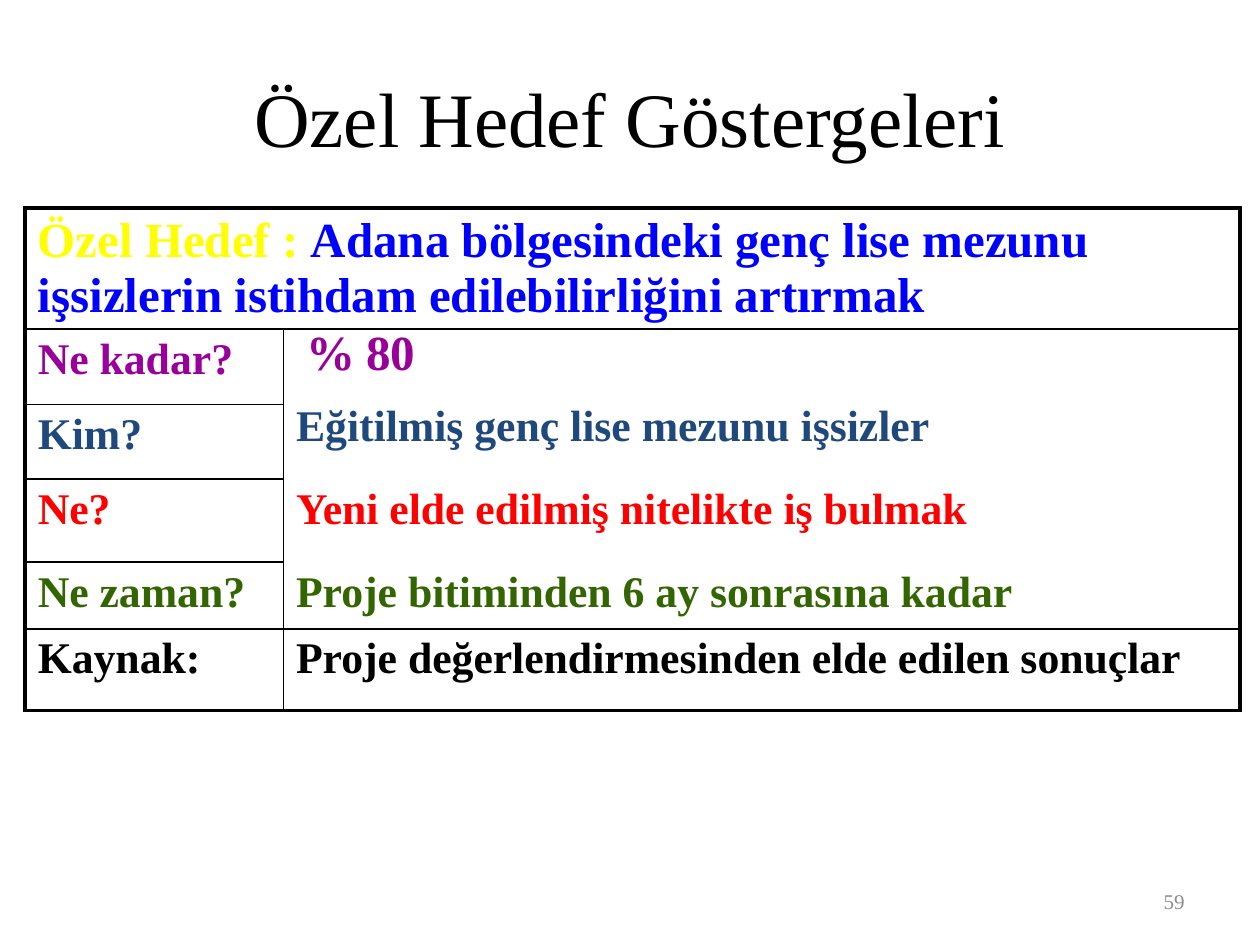
import pptx
import pptx.util
import pptx.dml.color
import pptx.enum.text
import pptx.oxml.ns
import lxml.etree

COLORS = {
    "black": "000000", "white": "FFFFFF", "yellow": "FFFF00", "blue": "0000FF",
    "purple": "990099", "navy": "1F497D", "red": "FF0000", "green": "336600",
    "gray": "8C8C8C",
}
ALIGN = pptx.enum.text.PP_ALIGN
MIDDLE = pptx.enum.text.MSO_ANCHOR.MIDDLE
TITLE_ONLY = 5
OUTER, INNER, NONE = 2.25, 1, 0


class SlideBuilder:
    font_name = "Times New Roman"

    def __init__(self, deck):
        self.width, self.height = deck.slide_width, deck.slide_height
        self.slide = deck.slides.add_slide(deck.slide_layouts[TITLE_ONLY])

    def box(self, left, top, width, height):
        """Turn shares of the slide's size into lengths."""
        return (int(left * self.width), int(top * self.height),
                int(width * self.width), int(height * self.height))

    def style(self, font, size, color, bold=False):
        font.name, font.size, font.bold = self.font_name, pptx.util.Pt(size), bold
        font.color.rgb = pptx.dml.color.RGBColor.from_string(COLORS[color])

    def set_text(self, frame, text, size, color, align):
        frame.word_wrap = True
        frame.vertical_anchor = MIDDLE
        paragraph = frame.paragraphs[0]
        paragraph.text = text
        paragraph.alignment = align
        self.style(paragraph.font, size, color)

    def title(self, text, area):
        heading = self.slide.shapes.title
        heading.left, heading.top, heading.width, heading.height = self.box(*area)
        self.set_text(heading.text_frame, text, 44, "black", ALIGN.CENTER)

    def label(self, text, area, size, color, align):
        holder = self.slide.shapes.add_textbox(*self.box(*area))
        self.set_text(holder.text_frame, text, size, color, align)

    def table(self, area, column_shares, row_shares):
        left, top, width, height = self.box(*area)
        grid = self.slide.shapes.add_table(
            len(row_shares), len(column_shares), left, top, width, height).table
        grid.first_row = grid.horz_banding = False
        for column, share in zip(grid.columns, column_shares):
            column.width = int(share * self.width)
        for row, share in zip(grid.rows, row_shares):
            row.height = int(share * self.height)
        return grid

    def cell(self, cell, runs, borders, line_spacing=None):
        """Fill in (text, size, color) runs; borders are left, right, top, bottom."""
        paragraph = cell.text_frame.paragraphs[0]
        if line_spacing:
            paragraph.line_spacing = line_spacing
        for text, size, color in runs:
            run = paragraph.add_run()
            run.text = text
            self.style(run.font, size, color, bold=True)
        self.borders(cell, borders)
        cell.fill.solid()
        cell.fill.fore_color.rgb = pptx.dml.color.RGBColor.from_string(COLORS["white"])

    def borders(self, cell, widths):
        qn = pptx.oxml.ns.qn
        properties = cell._tc.get_or_add_tcPr()
        for side, points in zip("LRTB", widths):
            line = lxml.etree.SubElement(properties, qn(f"a:ln{side}"),
                                         w=str(pptx.util.Pt(points)))
            if points:
                fill = lxml.etree.SubElement(line, qn("a:solidFill"))
                lxml.etree.SubElement(fill, qn("a:srgbClr"), val=COLORS["black"])
            else:
                lxml.etree.SubElement(line, qn("a:noFill"))


def main():
    deck = pptx.Presentation()
    deck.slide_width, deck.slide_height = pptx.util.Inches(10), pptx.util.Inches(7.5)
    page = SlideBuilder(deck)

    # Title
    page.title("Özel Hedef Göstergeleri", (0.05, 0.04, 0.9, 1 / 6))

    # Table: the objective above its question and answer rows
    objective = [("Özel Hedef : ", 28, "yellow"),
                 ("Adana bölgesindeki genç lise mezunu işsizlerin istihdam "
                  "edilebilirliğini artırmak", 28, "blue")]
    # Question, answer runs, colour, answer line spacing, row height in inches
    indicators = [
        ("Ne kadar?", [(" ", 24, "red"), ("%", 28, "purple"),
                       (" ", 24, "red"), ("80", 28, "purple")], "purple", 0.8, 0.6),
        ("Kim?", "Eğitilmiş genç lise mezunu işsizler", "navy", 0.8, 0.59),
        ("Ne?", "Yeni elde edilmiş nitelikte iş bulmak", "red", None, 0.66),
        ("Ne zaman?", "Proje bitiminden 6 ay sonrasına kadar", "green", None, 0.53),
        ("Kaynak:", "Proje değerlendirmesinden elde edilen sonuçlar",
         "black", None, 0.65),
    ]
    row_heights = [0.96] + [indicator[-1] for indicator in indicators]
    goals = page.table((0.02, 0.22, 0.96, sum(row_heights) / 7.5),
                       (0.205, 0.759), [height / 7.5 for height in row_heights])

    goals.cell(0, 0).merge(goals.cell(0, 1))
    page.cell(goals.cell(0, 0), objective, (OUTER, OUTER, OUTER, INNER))
    page.cell(goals.cell(0, 1), [], (NONE, OUTER, OUTER, INNER))

    last = len(indicators)
    for row, (question, answer, color, spacing, _) in enumerate(indicators, 1):
        bottom = OUTER if row == last else INNER
        page.cell(goals.cell(row, 0), [(question, 25, color)],
                  (OUTER, INNER, INNER, bottom))
        # The answers share one open block; only the source row is ruled off
        answer_top = INNER if row in (1, last) else NONE
        answer_bottom = bottom if row >= last - 1 else NONE
        runs = [(answer, 25, color)] if isinstance(answer, str) else answer
        page.cell(goals.cell(row, 1), runs,
                  (INNER, OUTER, answer_top, answer_bottom), spacing)

    # Page number
    page.label("59", (0.717, 0.927, 0.233, 0.053), 12, "gray", ALIGN.RIGHT)

    deck.save("out.pptx")


if __name__ == "__main__":
    main()
